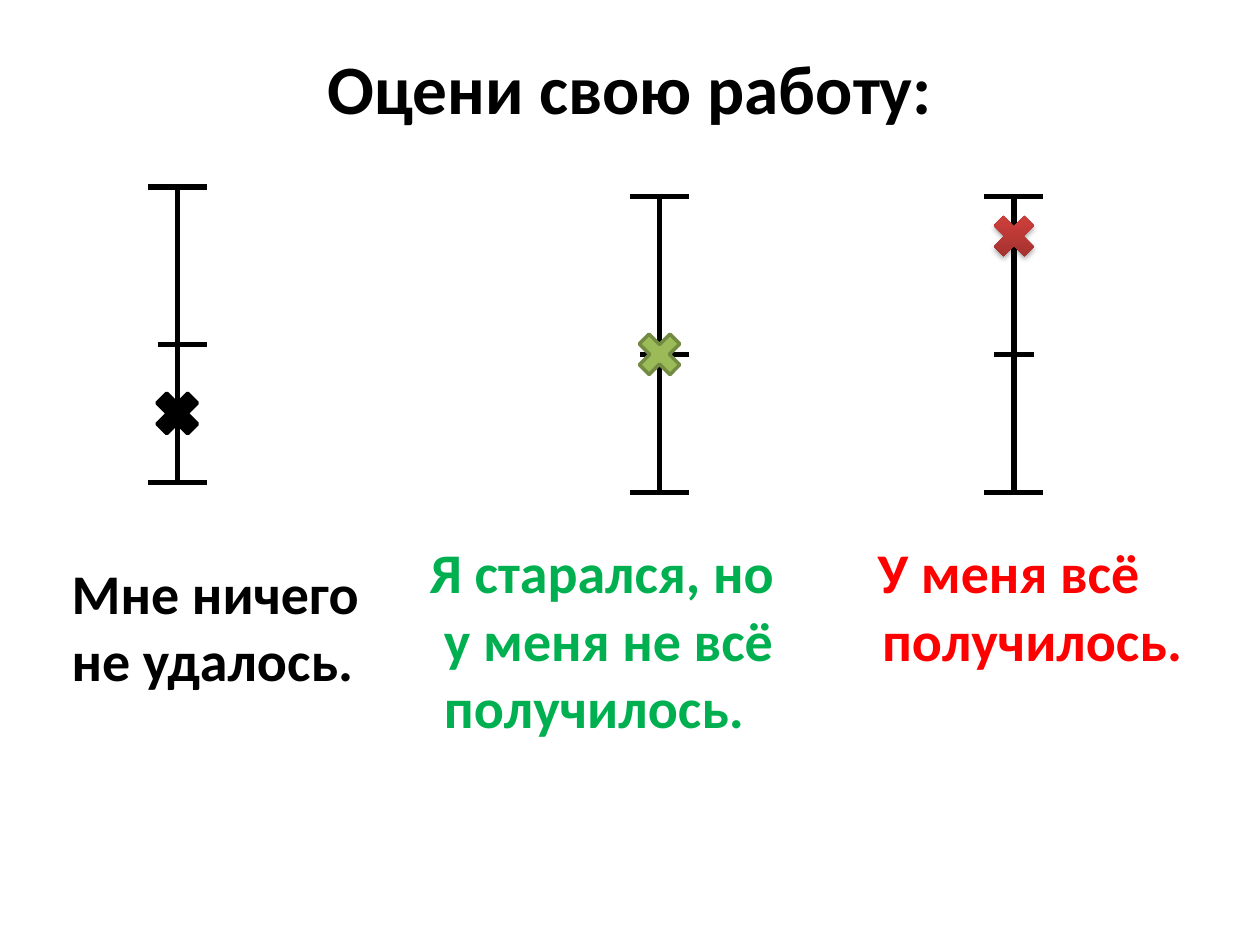
from dataclasses import dataclass

from lxml.etree import SubElement
from pptx import Presentation
from pptx.dml.color import RGBColor
from pptx.enum.shapes import MSO_CONNECTOR, MSO_SHAPE
from pptx.enum.text import MSO_ANCHOR, PP_ALIGN
from pptx.oxml import parse_xml
from pptx.oxml.ns import nsdecls, qn
from pptx.util import Pt


@dataclass(frozen=True)
class Theme:
    font: str = "Calibri"
    title_size: float = 39.6
    caption_size: float = 32
    black: str = "000000"
    green_text: str = "00B050"
    red_text: str = "FF0000"
    green_fill: str = "9BBB59"
    green_line: str = "738A42"
    red_dark: str = "9C2F2D"
    red_light: str = "CB3E3A"


THEME = Theme()
SCALE_HEIGHT = 168.75
MIDDLE_OFFSET = 90
TICK_HALF = 16.88
SHORT_TICK_HALF = 11.25
MARK_SIZE = 33.75


def color(value):
    return RGBColor.from_string(value)


def add_text(slide, box, text, size, text_color, align=PP_ALIGN.LEFT,
             anchor=MSO_ANCHOR.TOP, margin=0, indent=0):
    shape = slide.shapes.add_textbox(*(Pt(length) for length in box))
    text_frame = shape.text_frame
    text_frame.word_wrap = True
    text_frame.vertical_anchor = anchor
    text_frame.text = text
    paragraph = text_frame.paragraphs[0]
    paragraph.alignment = align
    if margin:
        properties = paragraph._p.get_or_add_pPr()
        properties.set("marL", str(Pt(margin)))
        properties.set("indent", str(Pt(indent)))
    font = paragraph.runs[0].font
    font.name, font.size, font.bold = THEME.font, Pt(size), True
    font.color.rgb = color(text_color)


def add_line(slide, x1, y1, x2, y2):
    connector = slide.shapes.add_connector(
        MSO_CONNECTOR.STRAIGHT, Pt(x1), Pt(y1), Pt(x2), Pt(y2))
    connector.line.width = Pt(3)
    connector.line.color.rgb = color(THEME.black)
    SubElement(connector._element.spPr, qn("a:effectLst"))


def add_scale(slide, x, top, middle_left, middle_right):
    bottom = top + SCALE_HEIGHT
    middle = top + MIDDLE_OFFSET
    add_line(slide, x, top, x, bottom)
    for y in (top, bottom):
        add_line(slide, x - TICK_HALF, y, x + TICK_HALF, y)
    add_line(slide, x - middle_left, middle, x + middle_right, middle)


def add_mark(slide, x, y):
    half = MARK_SIZE / 2
    mark = slide.shapes.add_shape(
        MSO_SHAPE.MATH_MULTIPLY, Pt(x - half), Pt(y - half),
        Pt(MARK_SIZE), Pt(MARK_SIZE))
    mark.shadow.inherit = False
    return mark


def style_flat_mark(mark, fill_color, line_color):
    mark.fill.solid()
    mark.fill.fore_color.rgb = color(fill_color)
    mark.line.color.rgb = color(line_color)
    mark.line.width = Pt(2)


def style_raised_mark(mark):
    mark.line.fill.background()
    mark.fill.gradient()
    mark.fill.gradient_angle = 90
    stops = ((0, THEME.red_dark), (0.8, THEME.red_light))
    for stop, (position, value) in zip(mark.fill.gradient_stops, stops):
        stop.position = position
        stop.color.rgb = color(value)
    effects = mark._element.spPr.find(qn("a:effectLst"))
    effects.append(parse_xml(
        f'<a:outerShdw {nsdecls("a")} blurRad="{Pt(3.1)}" dist="{Pt(1.8)}" '
        'dir="5400000" rotWithShape="0">'
        f'<a:srgbClr val="{THEME.black}"><a:alpha val="35000"/></a:srgbClr>'
        '</a:outerShdw>'))


def main():
    presentation = Presentation()
    presentation.slide_width, presentation.slide_height = Pt(720), Pt(540)
    slide = presentation.slides.add_slide(presentation.slide_layouts[6])

    # Title
    add_text(slide, (36, 23.5, 648, 51.84), "Оцени свою работу:",
             THEME.title_size, THEME.black, PP_ALIGN.CENTER, MSO_ANCHOR.MIDDLE)

    # Captions below the scales
    add_text(slide, (219.6, 303.84, 241.92, 118.08),
             "Я старался, но у меня не всё получилось.",
             THEME.caption_size, THEME.green_text, margin=27, indent=-8)
    add_text(slide, (33.84, 303.84, 196.56, 95.76), "Мне ничего не удалось.",
             THEME.caption_size, THEME.black, anchor=MSO_ANCHOR.BOTTOM)
    add_text(slide, (466.56, 303.84, 219.6, 118.08), "У меня всё получилось.",
             THEME.caption_size, THEME.red_text, PP_ALIGN.CENTER,
             margin=27, indent=-27)

    # Low result
    add_scale(slide, 101.25, 106.88, SHORT_TICK_HALF, TICK_HALF)
    style_flat_mark(add_mark(slide, 101.25, 236.25), THEME.black, THEME.black)

    # Middle result
    add_scale(slide, 376.88, 112.5, SHORT_TICK_HALF, TICK_HALF)
    style_flat_mark(add_mark(slide, 376.88, 202.5),
                    THEME.green_fill, THEME.green_line)

    # High result
    add_scale(slide, 579.38, 112.5, SHORT_TICK_HALF, SHORT_TICK_HALF)
    style_raised_mark(add_mark(slide, 579.38, 135))

    presentation.save("out.pptx")


if __name__ == "__main__":
    main()
